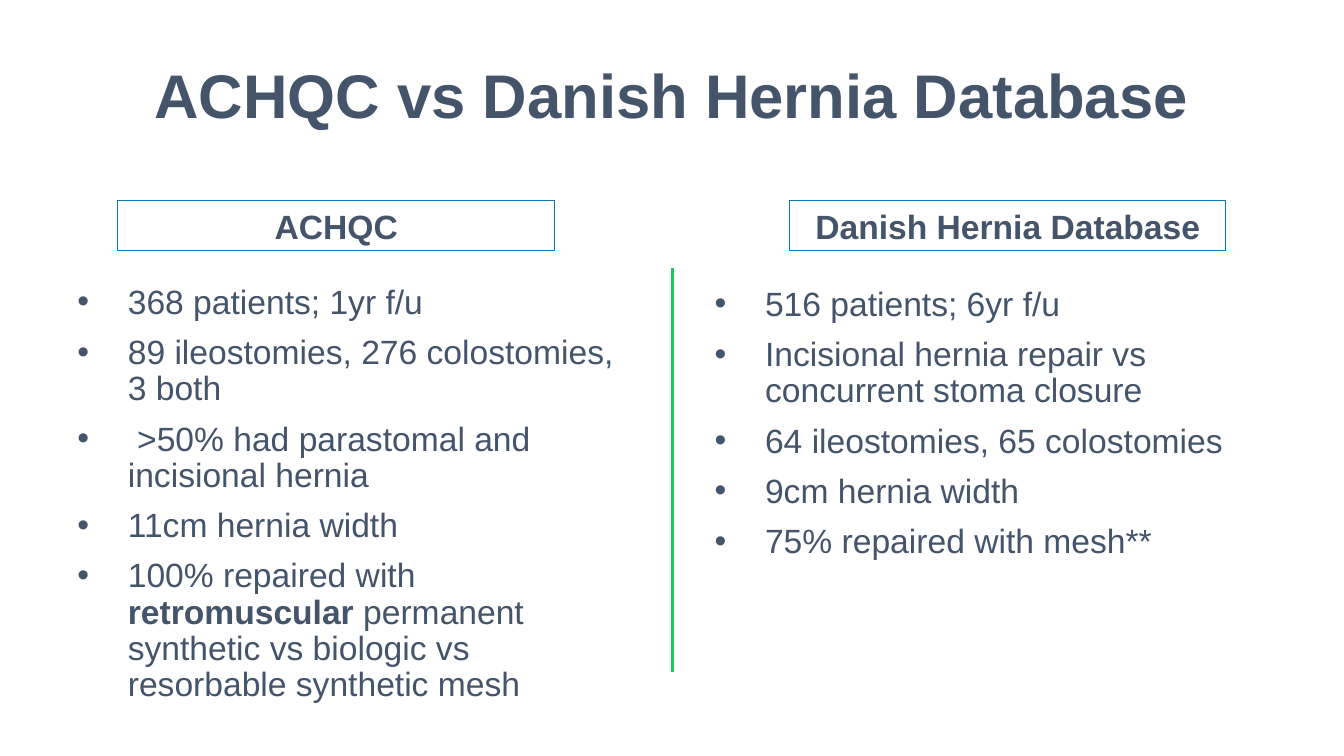
from dataclasses import dataclass

import lxml.etree
import pptx
import pptx.dml.color
import pptx.enum.shapes
import pptx.enum.text
import pptx.oxml.ns
import pptx.util

Inches = pptx.util.Inches
Pt = pptx.util.Pt
ALIGN = pptx.enum.text.PP_ALIGN
ANCHOR = pptx.enum.text.MSO_ANCHOR


@dataclass(frozen=True)
class Theme:
    font: str = "Arial"
    text: str = "44546A"
    border: str = "0877BC"
    divider: str = "1EC85A"
    background: str = "FFFFFF"
    title_size: int = 44
    body_size: int = 24
    line_spacing: float = 0.9
    space_before: int = 10


def rgb(value):
    return pptx.dml.color.RGBColor.from_string(value)


def add_text(p, text, *, theme, size, bold=False):
    r = p.add_run()
    r.text = text
    r.font.name = theme.font
    r.font.size = Pt(size)
    r.font.bold = bold
    r.font.color.rgb = rgb(theme.text)
    return r


class SlideBuilder:
    def __init__(self, s, theme):
        self.s = s
        self.theme = theme
        s.background.fill.solid()
        s.background.fill.fore_color.rgb = rgb(theme.background)

    def textbox(self, left, top, width, height, anchor=ANCHOR.TOP):
        sp = self.s.shapes.add_textbox(
            Inches(left), Inches(top), Inches(width), Inches(height))
        tf = sp.text_frame
        tf.word_wrap = True
        tf.vertical_anchor = anchor
        return tf

    def title(self, text, left, top, width, height):
        p = self.textbox(left, top, width, height, ANCHOR.MIDDLE).paragraphs[0]
        p.alignment = ALIGN.CENTER
        p.line_spacing = self.theme.line_spacing
        add_text(p, text, theme=self.theme, size=self.theme.title_size, bold=True)

    def heading(self, text, left, top, width, height):
        sp = self.s.shapes.add_shape(
            pptx.enum.shapes.MSO_SHAPE.RECTANGLE,
            Inches(left), Inches(top), Inches(width), Inches(height))
        sp.shadow.inherit = False
        sp.fill.background()
        sp.line.color.rgb = rgb(self.theme.border)
        sp.line.width = Pt(0.75)
        tf = sp.text_frame
        tf.word_wrap = True
        tf.vertical_anchor = ANCHOR.TOP
        p = tf.paragraphs[0]
        p.alignment = ALIGN.CENTER
        add_text(p, text, theme=self.theme, size=self.theme.body_size, bold=True)

    def bullets(self, items, left, top, width, height):
        tf = self.textbox(left, top, width, height)
        for i, item in enumerate(items):
            p = tf.add_paragraph() if i else tf.paragraphs[0]
            pPr = p._p.get_or_add_pPr()
            pPr.set("marL", str(Inches(0.5)))
            pPr.set("indent", str(Inches(-0.5)))
            qn = pptx.oxml.ns.qn
            lxml.etree.SubElement(pPr, qn("a:buFont"), typeface=self.theme.font)
            lxml.etree.SubElement(pPr, qn("a:buChar"), char="•")
            p.line_spacing = self.theme.line_spacing
            if i:
                p.space_before = Pt(self.theme.space_before)
            for j, text in enumerate(item):
                add_text(p, text, theme=self.theme, size=self.theme.body_size,
                         bold=j % 2 == 1)

    def divider(self, x, top, bottom):
        c = self.s.shapes.add_connector(
            pptx.enum.shapes.MSO_CONNECTOR.STRAIGHT,
            Inches(x), Inches(top), Inches(x), Inches(bottom))
        c.line.color.rgb = rgb(self.theme.divider)
        c.line.width = Pt(1.5)
        lxml.etree.SubElement(c._element.spPr, pptx.oxml.ns.qn("a:effectLst"))


def main():
    prs = pptx.Presentation()
    prs.slide_width = Inches(13.33)
    prs.slide_height = Inches(7.5)
    slide = SlideBuilder(prs.slides.add_slide(prs.slide_layouts[6]), Theme())

    slide.title("ACHQC vs Danish Hernia Database", 0, 0.25, 13.33, 1.45)

    achqc = [
        ["368 patients; 1yr f/u"],
        ["89 ileostomies, 276 colostomies, 3 both"],
        [" >50% had parastomal and incisional hernia"],
        ["11cm hernia width"],
        ["100% repaired with ", "retromuscular",
         " permanent synthetic vs biologic vs resorbable synthetic mesh"],
    ]
    danish = [
        ["516 patients; 6yr f/u"],
        ["Incisional hernia repair vs concurrent stoma closure"],
        ["64 ileostomies, 65 colostomies"],
        ["9cm hernia width"],
        ["75% repaired with mesh**"],
    ]
    columns = [
        ("ACHQC", 1.17, achqc, 0.67, 2.78),
        ("Danish Hernia Database", 7.83, danish, 6.99, 2.8),
    ]
    for name, heading_left, items, left, top in columns:
        slide.bullets(items, left, top, 5.67, 4.7)
        slide.heading(name, heading_left, 1.99, 4.33, 0.5)

    slide.divider(6.67, 2.66, 6.67)
    prs.save("out.pptx")


if __name__ == "__main__":
    main()
